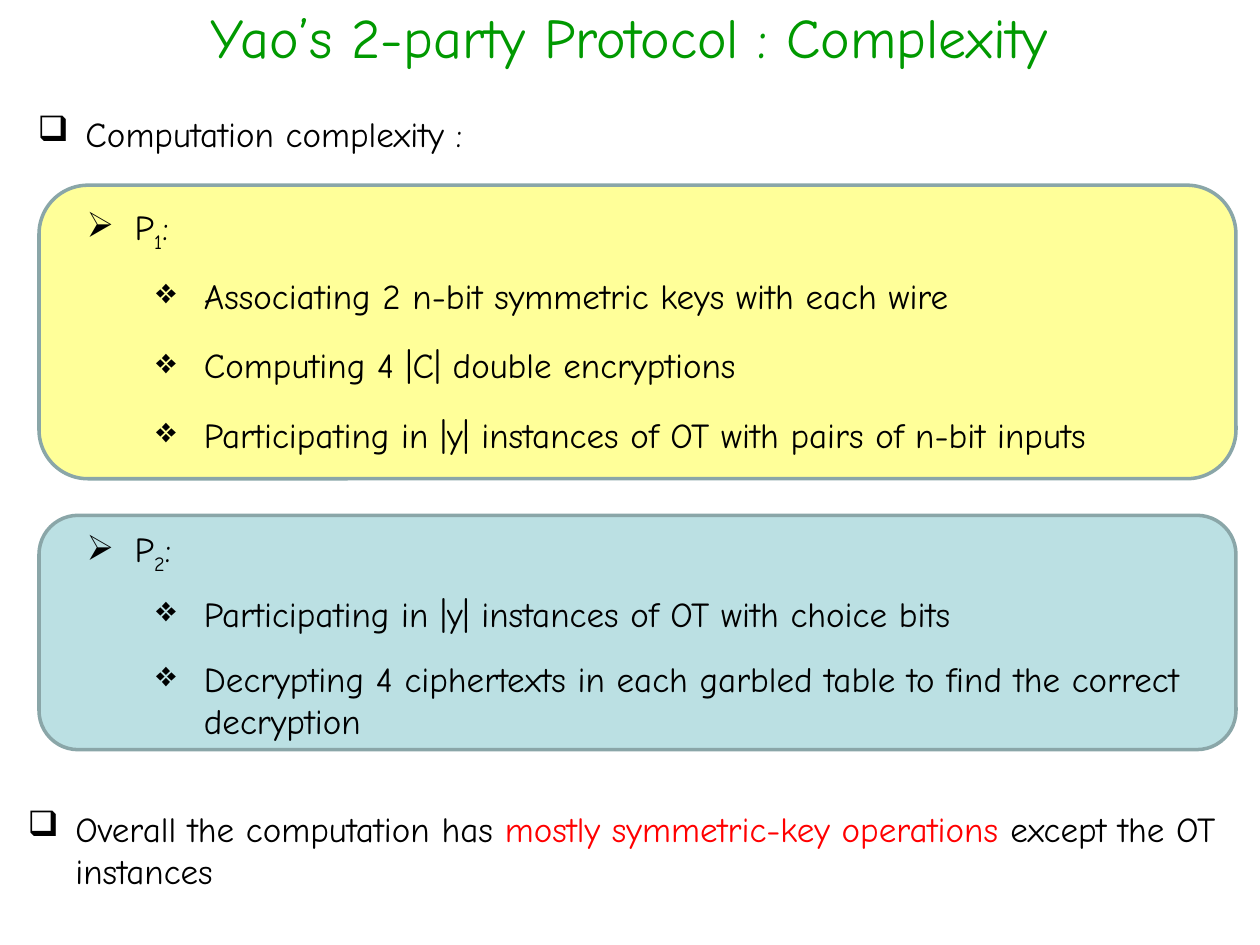
from dataclasses import dataclass

import pptx
import pptx.dml.color
import pptx.enum.shapes
import pptx.enum.text
import pptx.oxml.ns
import pptx.util
from lxml import etree
from pptx.dml.color import RGBColor
from pptx.util import Inches

FONT = "Comic Neue"
BLACK = RGBColor(0x00, 0x00, 0x00)
WHITE = RGBColor(0xFF, 0xFF, 0xFF)
GREEN = RGBColor(0x00, 0x99, 0x00)
RED = RGBColor(0xFF, 0x00, 0x00)
YELLOW = RGBColor(0xFF, 0xFF, 0x99)
TEAL = RGBColor(0xBB, 0xE0, 0xE3)
BORDER = RGBColor(0x8A, 0xA6, 0xA8)

SECTION, PARTY, STEP = "❑", "➢", "❖"
INDENT = Inches(0.38)
LINE_HEIGHT = 0.44
TWO_LINES = 0.77


@dataclass(frozen=True)
class Span:
    text: str
    color: RGBColor = BLACK
    subscript: bool = False


@dataclass(frozen=True)
class Item:
    bullet: str
    left: float
    top: float
    width: float
    spans: tuple[Span, ...]
    height: float = LINE_HEIGHT


@dataclass(frozen=True)
class Panel:
    top: float
    height: float
    fill: RGBColor


def party(number: str, top: float) -> Item:
    spans = (Span("P"), Span(number, subscript=True), Span(":"))
    return Item(PARTY, 0.59, top, 1.1, spans)


def step(text: str, top: float, height: float = LINE_HEIGHT) -> Item:
    return Item(STEP, 1.14, top, 8.82, (Span(text),), height)


PANELS = (Panel(1.47, 2.33, YELLOW), Panel(4.09, 1.86, TEAL))

GARBLER_STEPS = (
    "Associating 2 n-bit symmetric keys with each wire",
    "Computing 4 |C| double encryptions",
    "Participating in |y| instances of OT with pairs of n-bit inputs",
)

ITEMS = (
    Item(SECTION, 0.2, 0.84, 9.69, (Span("Computation complexity :"),)),
    party("1", 1.58),
    *(step(text, 2.13 + 0.55 * row) for row, text in enumerate(GARBLER_STEPS)),
    party("2", 4.14),
    step("Participating in |y| instances of OT with choice bits", 4.65),
    step("Decrypting 4 ciphertexts in each garbled table to find the correct decryption",
         5.17, TWO_LINES),
    Item(SECTION, 0.12, 6.36, 9.69,
         (Span("Overall the computation has "),
          Span("mostly symmetric-key operations ", RED),
          Span("except the OT instances")), TWO_LINES),
)


def draw_panel(page: pptx.slide.Slide, panel: Panel) -> None:
    shape = page.shapes.add_shape(
        pptx.enum.shapes.MSO_SHAPE.ROUNDED_RECTANGLE,
        Inches(0.31), Inches(panel.top), Inches(9.5), Inches(panel.height))
    shape.shadow.inherit = False
    shape.fill.solid()
    shape.fill.fore_color.rgb = panel.fill
    shape.line.color.rgb = BORDER
    shape.line.width = pptx.util.Pt(2)


def add_text(page: pptx.slide.Slide, left: float, top: float, width: float,
             height: float, spans: tuple[Span, ...], size: int):
    """Add a wrapping text box and return its only paragraph."""
    box = page.shapes.add_textbox(
        Inches(left), Inches(top), Inches(width), Inches(height))
    box.text_frame.word_wrap = True
    para = box.text_frame.paragraphs[0]
    for span in spans:
        run = para.add_run()
        run.text = span.text
        run.font.name = FONT
        run.font.size = pptx.util.Pt(size)
        run.font.color.rgb = span.color
        if span.subscript:
            run.font._element.set("baseline", "-25000")
    return para


def draw_item(page: pptx.slide.Slide, item: Item) -> None:
    para = add_text(page, item.left, item.top, item.width, item.height,
                    item.spans, 20)
    properties = para._p.get_or_add_pPr()
    properties.set("marL", str(INDENT))
    properties.set("indent", str(-INDENT))
    bullet = etree.SubElement(properties, pptx.oxml.ns.qn("a:buChar"))
    bullet.set("char", item.bullet)


def main() -> None:
    deck = pptx.Presentation()
    deck.slide_width = Inches(10)
    deck.slide_height = Inches(7.5)
    page = deck.slides.add_slide(deck.slide_layouts[6])
    page.background.fill.solid()
    page.background.fill.fore_color.rgb = WHITE

    for panel in PANELS:
        draw_panel(page, panel)
    title = add_text(page, -0.2, -0.03, 10.39, 0.63,
                     (Span("Yao’s 2-party Protocol : Complexity", GREEN),), 32)
    title.alignment = pptx.enum.text.PP_ALIGN.CENTER
    for item in ITEMS:
        draw_item(page, item)

    deck.save("out.pptx")


if __name__ == "__main__":
    main()
